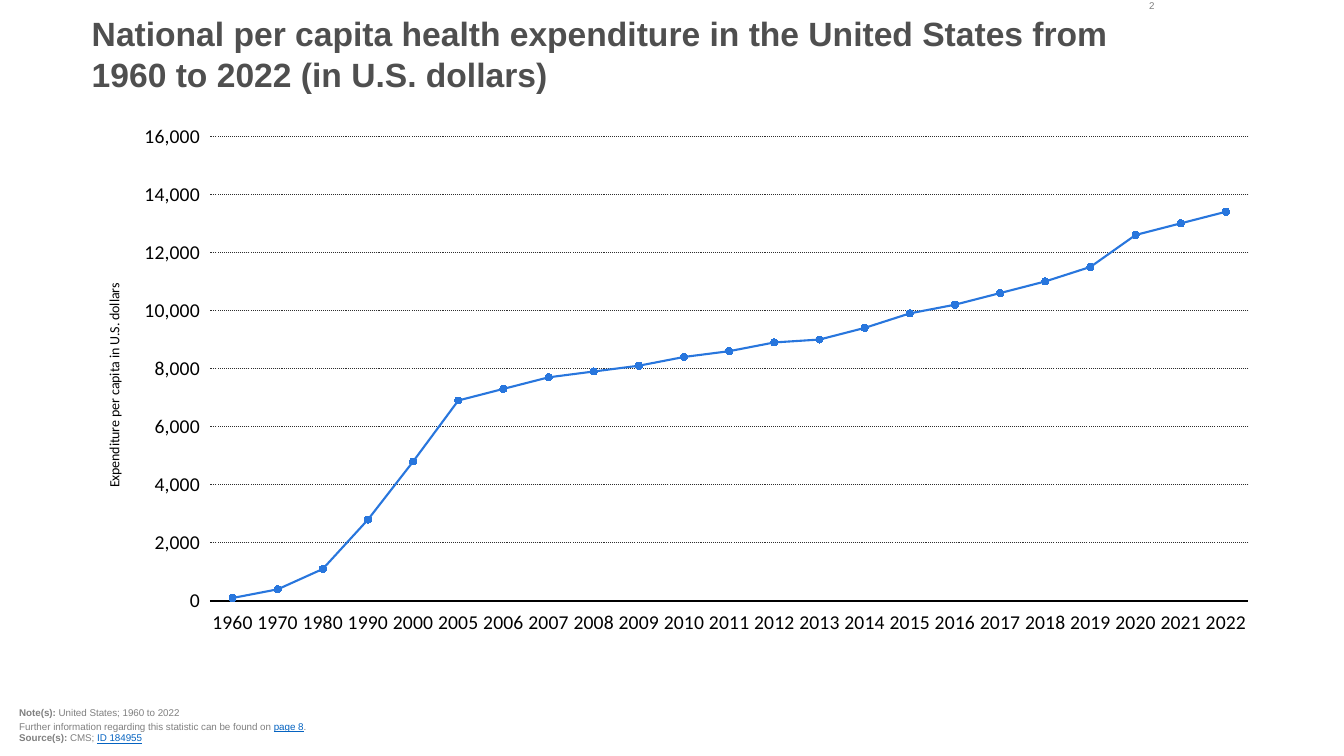
from lxml import etree
from pptx import Presentation
from pptx.chart.data import CategoryChartData
from pptx.dml.color import RGBColor
from pptx.enum.chart import XL_CHART_TYPE as ChartType, XL_MARKER_STYLE as Marker
from pptx.enum.chart import XL_TICK_LABEL_POSITION as LabelPosition, XL_TICK_MARK as TickMark
from pptx.enum.dml import MSO_LINE as Dash
from pptx.enum.text import MSO_ANCHOR as Anchor, MSO_AUTO_SIZE as AutoSize, PP_ALIGN as Align
from pptx.oxml.ns import qn
from pptx.util import Emu, Pt

PX = 9144  # 100 px to the inch
COLORS = {"title": "4F4F4F", "note": "808080", "link": "0563C1",
          "line": "2876DD", "grid": "2F2F2F", "axis": "000000"}

TITLE = ("National per capita health expenditure in the United States "
         "from 1960 to 2022 (in U.S. dollars)")
AXIS_TITLE = "Expenditure per capita in U.S. dollars"
PAGE_NUMBER = "2"
NOTES = [
    [("Note(s):", "bold"), (" United States; 1960 to 2022", "plain")],
    [("Further information regarding this statistic can be found on ", "plain"),
     ("page 8", "link"), (".", "plain")],
    [("Source(s): ", "bold"), ("CMS; ", "plain"), ("ID 184955", "link")],
]
YEARS = [1960, 1970, 1980, 1990, 2000, *range(2005, 2023)]
SPENDING = [100, 400, 1100, 2800, 4800, 6900, 7300, 7700, 7900, 8100, 8400, 8600,
            8900, 9000, 9400, 9900, 10200, 10600, 11000, 11500, 12600, 13000, 13400]

# left, top, width, height in px
TITLE_AT = (91, 13, 1017, 132)
CHART_AT = (78, 114, 1184, 530)
NOTES_AT = (19, 680, 882, 58)
NUMBER_AT = (1097, 0, 48, 22)


def emu(*lengths):
    return [Emu(length * PX) for length in lengths]


def rgb(name):
    return RGBColor.from_string(COLORS[name])


def style_font(font, name, size, color, bold=False):
    font.name, font.size, font.bold = name, Pt(size), bold
    font.color.rgb = rgb(color)


def prepare_frame(frame, anchor=Anchor.TOP):
    frame.margin_left = frame.margin_top = frame.margin_right = frame.margin_bottom = 0
    frame.word_wrap = True
    frame.auto_size = AutoSize.NONE
    frame.vertical_anchor = anchor


def set_layout(parent, **fractions):
    """Place a chart part by fractions of the chart's size."""
    layout = parent.find(qn("c:layout"))
    if layout is None:
        layout = etree.Element(qn("c:layout"))
        text = parent.find(qn("c:tx"))
        if text is None:
            parent.insert(0, layout)
        else:
            text.addnext(layout)
    manual = etree.SubElement(layout, qn("c:manualLayout"))
    if "w" in fractions:
        etree.SubElement(manual, qn("c:layoutTarget")).set("val", "inner")
    for key in ("x", "y"):
        etree.SubElement(manual, qn(f"c:{key}Mode")).set("val", "edge")
    for key, value in fractions.items():
        etree.SubElement(manual, qn(f"c:{key}")).set("val", str(value))


def add_title(page):
    title = page.shapes.title
    title.left, title.top, title.width, title.height = emu(*TITLE_AT)
    frame = title.text_frame
    frame.text = TITLE
    prepare_frame(frame)
    para = frame.paragraphs[0]
    para.alignment = Align.LEFT
    style_font(para.runs[0].font, "Arial", 24, "title", bold=True)


def add_notes(page):
    frame = page.shapes.add_textbox(*emu(*NOTES_AT)).text_frame
    prepare_frame(frame, Anchor.BOTTOM)
    for index, spans in enumerate(NOTES):
        para = frame.add_paragraph() if index else frame.paragraphs[0]
        para.space_after = Pt(0 if index else 1.4)
        for text, kind in spans:
            span = para.add_run()
            span.text = text
            color = "link" if kind == "link" else "note"
            style_font(span.font, "Arial", 7, color, bold=kind == "bold")
            span.font.underline = kind == "link"


def add_page_number(page):
    frame = page.shapes.add_textbox(*emu(*NUMBER_AT)).text_frame
    prepare_frame(frame)
    frame.text = PAGE_NUMBER
    para = frame.paragraphs[0]
    para.alignment = Align.RIGHT
    style_font(para.runs[0].font, "Arial", 7, "note")


def add_spending_chart(page):
    data = CategoryChartData(number_format="#,##0")
    data.categories = [str(year) for year in YEARS]
    data.add_series("Series 1", SPENDING)
    chart = page.shapes.add_chart(ChartType.LINE_MARKERS, *emu(*CHART_AT), data).chart
    chart.has_legend = chart.has_title = False
    style_font(chart.font, "Calibri", 8, "axis")
    set_layout(chart.plots[0]._element.getparent(), x=0.11, y=0.04, w=0.87, h=0.87)

    for axis in (chart.category_axis, chart.value_axis):
        axis.major_tick_mark = axis.minor_tick_mark = TickMark.NONE
        axis.tick_label_position = LabelPosition.LOW
        style_font(axis.tick_labels.font, "Calibri", 14, "axis")

    base_line = chart.category_axis.format.line
    base_line.color.rgb, base_line.width = rgb("axis"), Pt(2)

    dollars = chart.value_axis
    dollars.minimum_scale, dollars.maximum_scale, dollars.major_unit = 0, 16000, 2000
    dollars.tick_labels.number_format = "#,##0"
    dollars.tick_labels.number_format_is_linked = False
    dollars.format.line.fill.background()
    grid = dollars.major_gridlines.format.line
    grid.color.rgb, grid.width, grid.dash_style = rgb("grid"), Pt(0.75), Dash.ROUND_DOT
    frame = dollars.axis_title.text_frame
    frame.text = AXIS_TITLE
    style_font(frame.paragraphs[0].runs[0].font, "Calibri", 10, "axis")
    set_layout(dollars.axis_title._element, x=0.02, y=0.31)

    series = chart.plots[0].series[0]
    series.smooth = False
    series.format.line.color.rgb, series.format.line.width = rgb("line"), Pt(1.5)
    marker = series.marker
    marker.style, marker.size = Marker.CIRCLE, 5
    marker.format.fill.solid()
    marker.format.fill.fore_color.rgb = rgb("line")
    marker.format.line.color.rgb = rgb("line")


def main():
    deck = Presentation()
    deck.slide_width, deck.slide_height = emu(1333, 750)
    page = deck.slides.add_slide(deck.slide_layouts[5])
    add_title(page)
    add_notes(page)
    add_spending_chart(page)
    add_page_number(page)
    deck.save("out.pptx")


if __name__ == "__main__":
    main()
